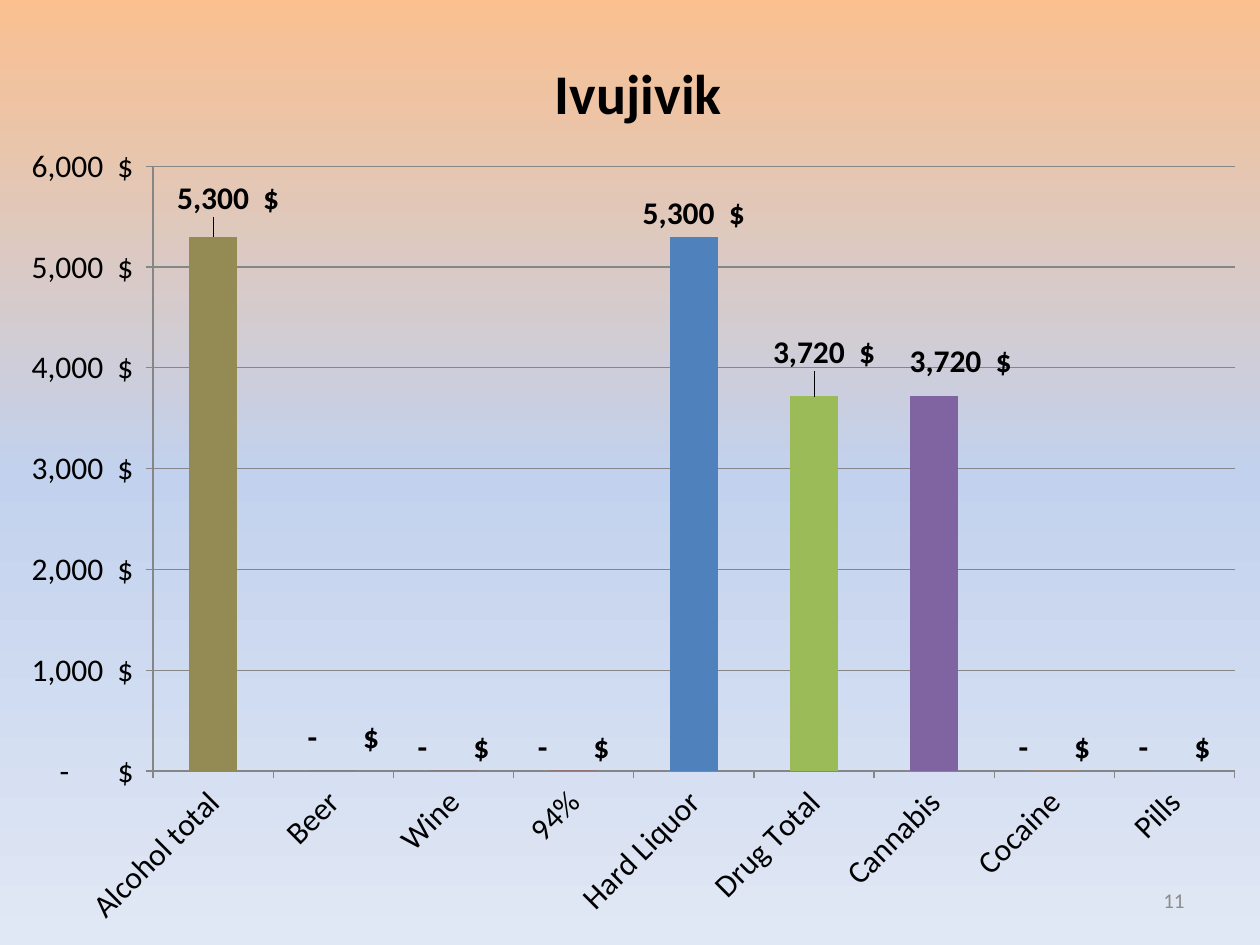
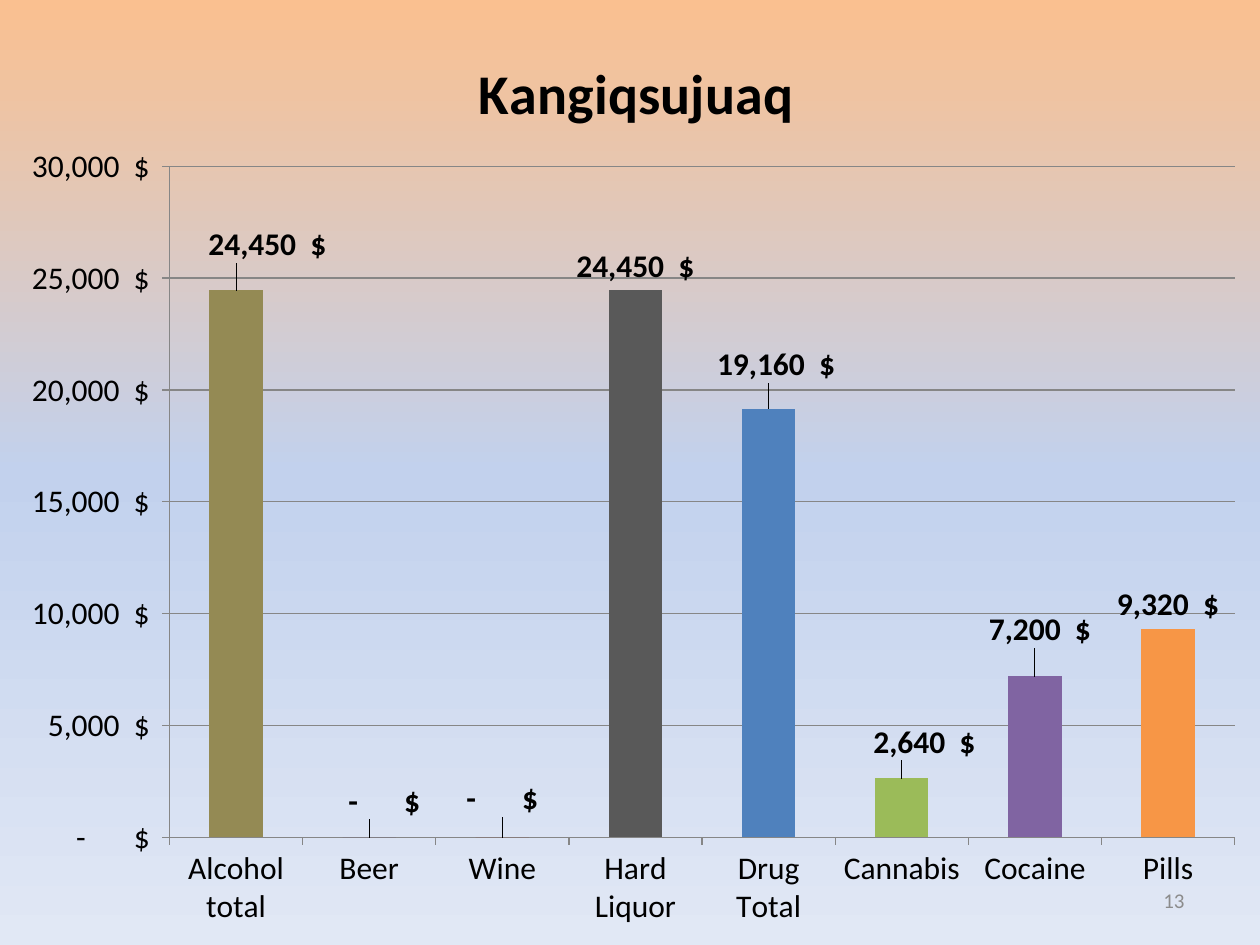
from copy import deepcopy

from lxml import etree
from pptx import Presentation
from pptx import util as u
from pptx.chart.data import CategoryChartData
from pptx.dml.color import RGBColor
from pptx.enum import chart as charts, text
from pptx.oxml.ns import qn

COLOURS = {
    "peach": "FAC090", "sky": "C2D1ED", "pale": "E1E8F5",
    "black": "000000", "line": "868686", "number": "8C8C8C",
    "khaki": "948A54", "plum": "604A7B", "brick": "953735", "red": "FF0000",
    "grey": "595959", "blue": "4F81BD", "green": "9BBB59",
    "violet": "8064A2", "orange": "F79646",
}
BACKGROUND_STOPS = ["peach", "sky", "pale"]
MONEY = r'_ * #,##0_)\ "$"_ ;_ * \(#,##0\)\ "$"_ ;_ * "-"??_)\ "$"_ ;_ @_ '
FORMATS = {
    "chart": {"name": "Calibri", "size": u.Pt(18)},
    "title": {"name": "Calibri", "size": u.Pt(32), "bold": True},
    "label": {"name": "Calibri", "size": u.Pt(18), "bold": True},
    "number": {"name": "Calibri", "size": u.Pt(12)},
}
PLOT_TOP, PLOT_RIGHT, TITLE_TOP = 17.6, 98, 4.6

VILLAGES = [
    {
        "name": "Ivujivik", "number": "11", "title_left": 43.2,
        "sales": {"Alcohol total": 5300, "Beer": 0, "Wine": 0, "94%": 0,
                  "Hard Liquor": 5300, "Drug Total": 3720, "Cannabis": 3720,
                  "Cocaine": 0, "Pills": 0},
        "fourth": "red", "top": 6000, "step": 1000, "rotation": -45,
        "plot_left": 12.15, "plot_bottom": 81.6,
        "label_shifts": {0: (1.2, -1.5), 1: (0.8, -1), 5: (0.8, -2.1),
                         6: (2.1, -1.1)},
    },
    {
        "name": "Kangiqsujuaq", "number": "13", "title_left": 37.2,
        "sales": {"Alcohol total": 24450, "Beer": 0, "Wine": 0,
                  "Hard Liquor": 24450, "Drug Total": 19160, "Cannabis": 2640,
                  "Cocaine": 7200, "Pills": 9320},
        "fourth": "grey", "top": 30000, "step": 5000, "rotation": 0,
        "plot_left": 13.45, "plot_bottom": 88.6,
        "label_shifts": {0: (2.5, -2.3), 1: (1.2, -1.3), 2: (0, -1.6),
                         4: (0.6, -2.2), 5: (1.8, -1.3), 6: (0.4, -2.4)},
    },
]


class VillageDeck:
    """Hold the shared style and the current slide of the village sales deck."""

    def __init__(self):
        self.presentation = Presentation()
        self.presentation.slide_width = u.Cm(25.4)
        self.presentation.slide_height = u.Cm(19.05)
        self.slide = None
        self.paint_background()

    def colour(self, name):
        return RGBColor.from_string(COLOURS[name])

    def style(self, font, kind, colour="black"):
        for attribute, value in FORMATS[kind].items():
            setattr(font, attribute, value)
        font.color.rgb = self.colour(colour)

    def paint_background(self):
        master = self.presentation.slide_master
        fill = master.background.fill
        fill.gradient()
        fill.gradient_angle = 270
        first = master._element.find(".//" + qn("p:bg")).find(".//" + qn("a:gs"))
        first.addnext(deepcopy(first))
        for index, (stop, name) in enumerate(zip(fill.gradient_stops, BACKGROUND_STOPS)):
            stop.color.rgb = self.colour(name)
            stop.position = index / 2

    def new_slide(self):
        self.slide = self.presentation.slides.add_slide(self.presentation.slide_layouts[6])

    def place(self, element, after, **settings):
        for old in element.findall(qn("c:layout")):
            element.remove(old)
        layout = etree.Element(qn("c:layout"))
        manual = etree.SubElement(layout, qn("c:manualLayout"))
        for tag, value in settings.items():
            shown = value if isinstance(value, str) else str(round(value / 100, 4))
            etree.SubElement(manual, qn("c:" + tag)).set("val", shown)
        if after:
            element.find(qn(after)).addnext(layout)
        else:
            element.insert(0, layout)

    def line(self, line_format):
        line_format.color.rgb = self.colour("line")
        line_format.width = u.Pt(0.75)

    def chart(self, village):
        sales = village["sales"]
        data = CategoryChartData(number_format=MONEY)
        data.categories = list(sales)
        data.add_series(village["name"], list(sales.values()))
        chart = self.slide.shapes.add_chart(
            charts.XL_CHART_TYPE.COLUMN_CLUSTERED, 0, 0,
            self.presentation.slide_width, self.presentation.slide_height, data).chart
        chart.has_legend = False
        self.style(chart.font, "chart")
        self.chart_title(chart, village)
        self.axes(chart, village)
        self.columns(chart.plots[0], village)
        self.place(chart._chartSpace.chart.plotArea, None, layoutTarget="inner",
                   xMode="edge", yMode="edge", x=village["plot_left"], y=PLOT_TOP,
                   w=PLOT_RIGHT - village["plot_left"],
                   h=village["plot_bottom"] - PLOT_TOP)

    def chart_title(self, chart, village):
        chart.has_title = True
        paragraph = chart.chart_title.text_frame.paragraphs[0]
        run = paragraph.add_run()
        run.text = village["name"]
        self.style(run.font, "title")
        self.place(chart.chart_title._element, "c:tx", xMode="edge", yMode="edge",
                   x=village["title_left"], y=TITLE_TOP)

    def axes(self, chart, village):
        for axis in (chart.category_axis, chart.value_axis):
            axis.major_tick_mark = charts.XL_TICK_MARK.OUTSIDE
            axis.minor_tick_mark = charts.XL_TICK_MARK.NONE
            self.style(axis.tick_labels.font, "chart")
            self.line(axis.format.line)
        body = chart.category_axis._element.find(".//" + qn("a:bodyPr"))
        body.set("rot", str(village["rotation"] * 60000))
        body.set("vert", "horz")
        values = chart.value_axis
        values.minimum_scale = 0
        values.maximum_scale = village["top"]
        values.major_unit = village["step"]
        values.has_major_gridlines = True
        self.line(values.major_gridlines.format.line)
        values.tick_labels.number_format = MONEY
        values.tick_labels.number_format_is_linked = False

    def columns(self, plot, village):
        plot.gap_width = 150
        plot.vary_by_categories = False
        series = plot.series[0]
        series.format.fill.solid()
        series.format.fill.fore_color.rgb = self.colour("blue")
        names = ["khaki", "plum", "brick", village["fourth"], "blue",
                 "green", "violet", "orange"]
        for index, name in enumerate(names):
            fill = series.points[index].format.fill
            fill.solid()
            fill.fore_color.rgb = self.colour(name)
        labels = series.data_labels
        labels.show_value = True
        labels.number_format = MONEY
        labels.number_format_is_linked = False
        labels.position = charts.XL_LABEL_POSITION.OUTSIDE_END
        self.style(labels.font, "label")
        for index, (right, down) in village["label_shifts"].items():
            label = series.points[index].data_label
            self.style(label.font, "label")
            label.position = charts.XL_LABEL_POSITION.OUTSIDE_END
            element = labels._element.findall(qn("c:dLbl"))[-1]
            self.place(element, "c:idx", x=right, y=down)

    def slide_number(self, number):
        box = self.slide.shapes.add_textbox(u.Cm(18.2), u.Cm(17.65), u.Cm(5.93), u.Cm(1.01))
        frame = box.text_frame
        frame.word_wrap = True
        frame.vertical_anchor = text.MSO_ANCHOR.MIDDLE
        paragraph = frame.paragraphs[0]
        paragraph.alignment = text.PP_ALIGN.RIGHT
        run = paragraph.add_run()
        run.text = number
        self.style(run.font, "number", "number")


def main():
    deck = VillageDeck()
    for village in VILLAGES:
        deck.new_slide()
        deck.chart(village)
        deck.slide_number(village["number"])
    deck.presentation.save("out.pptx")


if __name__ == "__main__":
    main()
